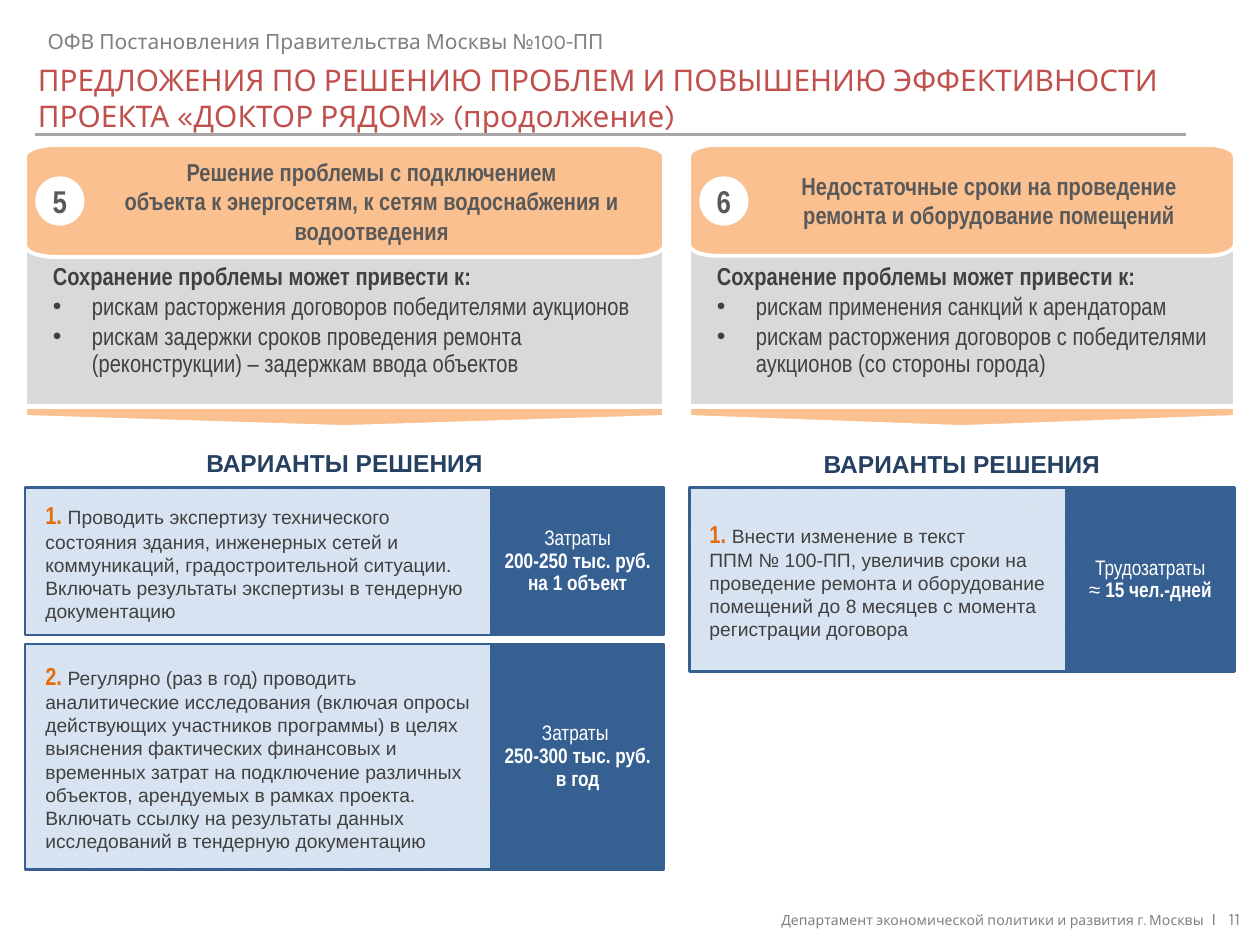
from copy import deepcopy
from math import cos, sin, pi
from pptx import Presentation
from pptx import util as u
from pptx.dml.color import RGBColor
from pptx.enum import dml, shapes, text
from pptx.oxml import parse_xml
from pptx.oxml.ns import qn, nsdecls

Inches, Pt = u.Inches, u.Pt
KIND, ALIGN, MID = shapes.MSO_SHAPE, text.PP_ALIGN, text.MSO_ANCHOR.MIDDLE
COLOR = {
    "red": "C0504D", "gray": "808080", "pale": "8C8C8C", "rule": "A6A6A6",
    "peach": "FAC090", "white": "FFFFFF", "silver": "D9D9D9", "dark": "404040",
    "head": "595959", "navy": "254061", "blue": "376092", "orange": "E46C0A",
    "hatch": "C0D5EE", "ice": "DCE6F2",
}
hue = {name: RGBColor.from_string(code) for name, code in COLOR.items()}


def paint(shape, fill, line=None, width=2.25):
    """Set fill and outline; a list of two colours gives a hatch."""
    shape.shadow.inherit = False
    if isinstance(fill, list):
        shape.fill.patterned()
        shape.fill.pattern = dml.MSO_PATTERN.LIGHT_UPWARD_DIAGONAL
        shape.fill.fore_color.rgb, shape.fill.back_color.rgb = [hue[c] for c in fill]
    else:
        shape.fill.solid()
        shape.fill.fore_color.rgb = hue[fill]
    if line:
        shape.line.color.rgb = hue[line]
        shape.line.width = Pt(width)
    else:
        shape.line.fill.background()


def write(shape, paras, pad=(0.1, 0.05, 0.1, 0.05), align=ALIGN.CENTER,
          anchor=MID, gap=0, lead=None):
    """Fill in paragraphs, each a list of (text, size, font, colour, bold)."""
    frame = shape.text_frame
    frame.word_wrap = True
    frame.vertical_anchor = anchor
    (frame.margin_left, frame.margin_top,
     frame.margin_right, frame.margin_bottom) = [Inches(v) for v in pad]
    for i, parts in enumerate(paras):
        para = frame.add_paragraph() if i else frame.paragraphs[0]
        para.alignment = align
        para.space_before, para.space_after = Pt(0), Pt(gap)
        if lead:
            para.line_spacing = lead
        for words, size, font, color, bold in parts:
            for n, line in enumerate(words.split("\n")):
                if n:
                    para.add_line_break()
                    mark = para._p.findall(qn("a:br"))[-1]
                    mark.append(deepcopy(run._r.rPr))
                if not line:
                    continue
                run = para.add_run()
                run.text = line
                run.font.size, run.font.name = Pt(size), font
                run.font.bold, run.font.color.rgb = bold, hue[color]


prs = Presentation()
prs.slide_width, prs.slide_height = Inches(10), Inches(7.5)
slide = prs.slides.add_slide(prs.slide_layouts[5])
sheet = slide.shapes

# Title, rule, top line and footer
title = sheet.title
title.left, title.top, title.width, title.height = [
    Inches(v) for v in (0.2, 0.44, 9.69, 0.67)]
write(title, [[("ПРЕДЛОЖЕНИЯ ПО РЕШЕНИЮ ПРОБЛЕМ И ПОВЫШЕНИЮ ЭФФЕКТИВНОСТИ\n"
                "ПРОЕКТА «ДОКТОР РЯДОМ» (продолжение)", 17, "Karla", "red", False)]],
      align=ALIGN.LEFT, anchor=text.MSO_ANCHOR.TOP)
title.text_frame.auto_size = text.MSO_AUTO_SIZE.NONE

rule = sheet.add_connector(shapes.MSO_CONNECTOR.STRAIGHT, Inches(0.28),
                           Inches(1.07), Inches(9.41), Inches(1.07))
rule.line.color.rgb, rule.line.width = hue["rule"], Pt(1.5)
rule._element.spPr.append(parse_xml("<a:effectLst %s/>" % nsdecls("a")))

foot = sheet.add_textbox(Inches(5.02), Inches(7.21), Inches(4.92), Inches(0.16))
write(foot, [[("Департамент экономической политики и развития г. Москвы  ",
               8, "Karla", "gray", False),
              ("I   ", 10, "Karla", "gray", False),
              ("11", 10, "Karla", "pale", False)]], align=ALIGN.RIGHT)
top = sheet.add_textbox(Inches(0.28), Inches(0.18), Inches(7.24), Inches(0.3))
write(top, [[("ОФВ Постановления Правительства Москвы №100-ПП",
              12, "Karla", "gray", False)]],
      align=ALIGN.LEFT, anchor=text.MSO_ANCHOR.TOP)

# Problem columns: left, width, header height, label top, number, header, risks
columns = [
    (0.2, 5.07, 0.89, 3.52, "5",
     "Решение проблемы с подключением\n"
     "объекта к энергосетям, к сетям водоснабжения и водоотведения",
     ["рискам расторжения договоров победителями аукционов",
      "рискам задержки сроков проведения ремонта (реконструкции) – "
      "задержкам ввода объектов"]),
    (5.47, 4.33, 0.88, 3.53, "6",
     "Недостаточные сроки на проведение\nремонта и оборудование помещений",
     ["рискам применения санкций к арендаторам",
      "рискам расторжения договоров с победителями аукционов "
      "(со стороны города)"]),
]
for left, wide, high, low, number, header, risks in columns:
    # Downward pointer under the column
    arrow = sheet.add_shape(KIND.PENTAGON, Inches(left + wide / 2 - 0.08),
                            Inches(3.31 - wide / 2), Inches(0.16), Inches(wide))
    arrow.rotation = 90
    paint(arrow, "peach", "white")

    # Risks
    box = sheet.add_shape(KIND.RECTANGLE, Inches(left), Inches(1.94),
                          Inches(wide), Inches(1.28))
    paint(box, "silver", "white")
    lines = ["Сохранение проблемы может привести к:"] + risks
    write(box, [[(line, 14, "Arial Narrow", "dark", i == 0)]
                for i, line in enumerate(lines)],
          (0.12, 0.16, 0.12, 0.08), ALIGN.LEFT, text.MSO_ANCHOR.TOP, 2, 0.9)
    for i, para in enumerate(box.text_frame.paragraphs):
        props = para._p.get_or_add_pPr()
        props.set("marL", str(Inches(0.41 if i else 0.31)))
        props.set("indent", str(Inches(-0.31 if i else -0.21)))
        if i:
            props.append(parse_xml('<a:buFont %s typeface="Arial"/>' % nsdecls("a")))
            props.append(parse_xml('<a:buChar %s char="•"/>' % nsdecls("a")))

    # Header with flat elliptic corners
    rx, ry = wide * 0.05, 0.09
    spots = []
    for turn, (x, y) in enumerate([(left + wide - rx, 1.15 + high - ry),
                                   (left + rx, 1.15 + high - ry),
                                   (left + rx, 1.15 + ry),
                                   (left + wide - rx, 1.15 + ry)]):
        for step in range(13):
            angle = (turn + step / 12) * pi / 2
            spots.append((Inches(x + rx * cos(angle)), Inches(y + ry * sin(angle))))
    pen = sheet.build_freeform(*spots[0])
    pen.add_line_segments(spots[1:], close=True)
    cap = pen.convert_to_shape()
    paint(cap, "peach", "white")
    write(cap, [[(header, 14, "Arial Narrow", "head", True)]],
          (0.51, 0.03, 0.08, 0.03))

    # Number badge
    badge = sheet.add_shape(KIND.OVAL, Inches(left + 0.08), Inches(1.4),
                            Inches(0.39), Inches(0.39))
    paint(badge, "white")
    write(badge, [[(number, 18, "Arial Narrow", "head", True)]], (0, 0, 0, 0))

    # Label above the options
    label = sheet.add_textbox(Inches(left), Inches(low), Inches(wide), Inches(0.33))
    write(label, [[("ВАРИАНТЫ РЕШЕНИЯ", 14, "Arial", "navy", True)]],
          (0, 0, 0, 0), gap=6, lead=0.9)

# Options: left, top, text width, cost width, height, side pad, texts
options = [
    (5.47, 3.87, 2.99, 1.34, 1.46, 0.16, "1. ",
     "Внести изменение в текст\nППМ № 100-ПП, увеличив сроки на проведение ремонта "
     "и оборудование помещений до 8 месяцев с момента регистрации договора",
     "Трудозатраты\n≈ ", "15 чел.-дней"),
    (0.2, 3.87, 3.7, 1.37, 1.17, 0.08, "1. ",
     "Проводить экспертизу технического состояния здания, инженерных сетей и "
     "коммуникаций, градостроительной ситуации. Включать результаты экспертизы "
     "в тендерную документацию",
     "Затраты\n", "200-250 тыс. руб.\nна 1 объект"),
    (0.2, 5.11, 3.7, 1.37, 1.79, 0.08, "2. ",
     "Регулярно (раз в год) проводить аналитические исследования (включая опросы "
     "действующих участников программы) в целях выяснения фактических финансовых и "
     "временных затрат на подключение различных объектов, арендуемых в рамках "
     "проекта. Включать ссылку на результаты данных исследований в тендерную "
     "документацию",
     "Затраты \n", "250-300 тыс. руб. в год"),
]
for left, y, wide, side, high, pad, number, plan, kind, cost in options:
    price = sheet.add_shape(KIND.RECTANGLE, Inches(left + wide), Inches(y),
                            Inches(side), Inches(high))
    paint(price, "blue", "blue", 1.5)
    write(price, [[(kind, 12, "Arial Narrow", "white", False),
                   (cost, 12, "Arial Narrow", "white", True)]],
          (pad, 0.04, pad, 0.04), gap=6, lead=0.9)
    card = sheet.add_shape(KIND.PENTAGON, Inches(left), Inches(y),
                           Inches(wide), Inches(high))
    card.adjustments[0] = 0
    paint(card, ["hatch", "ice"], "blue", 1.5)
    write(card, [[(number, 14, "Arial Narrow", "orange", True),
                  (plan, 11, "Arial", "dark", False)]],
          (0.16, 0.08, 0.08, 0.08), ALIGN.LEFT)

prs.save("out.pptx")
